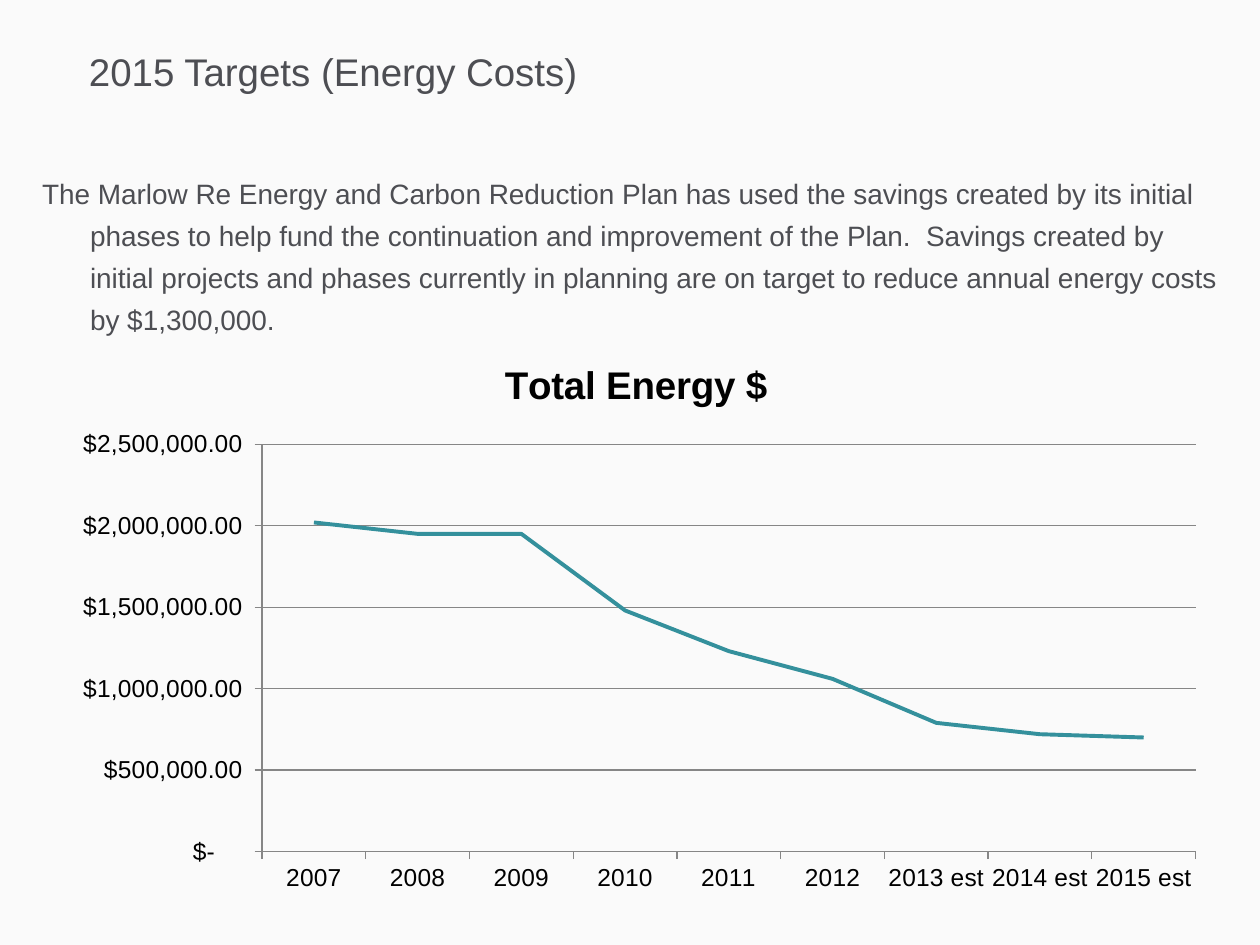
from pptx import Presentation
from pptx.chart.data import CategoryChartData
from pptx.dml.color import RGBColor
from pptx.enum.chart import XL_CHART_TYPE as ChartType, XL_TICK_MARK as TickMark
from pptx.enum.text import MSO_ANCHOR as Anchor
from pptx.util import Pt

PX = 914400 // 126
FONT = "Arial"
BACKGROUND = RGBColor(0xFA, 0xFA, 0xFA)
GREY = RGBColor(0x4D, 0x4E, 0x53)
BLACK = RGBColor(0, 0, 0)
TEAL = RGBColor(0x34, 0x90, 0x9C)
AXIS_GREY = RGBColor(0x86, 0x86, 0x86)

HEADING = "2015 Targets (Energy Costs)"
SUMMARY = (
    "The Marlow Re Energy and Carbon Reduction Plan has used the savings created "
    "by its initial phases to help fund the continuation and improvement of the "
    "Plan.  Savings created by initial projects and phases currently in planning "
    "are on target to reduce annual energy costs by $1,300,000."
)
COST_TITLE = "Total Energy $"
COSTS = {
    "2007": 2020000,
    "2008": 1950000,
    "2009": 1950000,
    "2010": 1480000,
    "2011": 1230000,
    "2012": 1060000,
    "2013 est": 790000,
    "2014 est": 720000,
    "2015 est": 700000,
}
DOLLARS = r'_("$"* #,##0.00_);_("$"* \(#,##0.00\);_("$"* "-"??_);_(@_)'


def px(*lengths):
    return [length * PX for length in lengths]


def style(font, size, color, bold=False):
    font.name, font.size, font.bold = FONT, Pt(size), bold
    font.color.rgb = color


def add_text(slide, text, box, size, color=GREY, inset=0, hanging=0, spacing=1.0):
    frame = slide.shapes.add_textbox(*px(*box)).text_frame
    frame.word_wrap = True
    frame.vertical_anchor = Anchor.TOP
    frame.margin_left = frame.margin_right = frame.margin_bottom = 0
    frame.margin_top = inset * PX
    paragraph = frame.paragraphs[0]
    paragraph.line_spacing = spacing
    if hanging:
        properties = paragraph._p.get_or_add_pPr()
        properties.set("marL", str(hanging * PX))
        properties.set("indent", str(-hanging * PX))
    run = paragraph.add_run()
    run.text = text
    style(run.font, size, color)


def add_cost_chart(slide, box):
    costs = CategoryChartData()
    costs.categories = list(COSTS)
    costs.add_series(COST_TITLE, list(COSTS.values()))
    chart = slide.shapes.add_chart(ChartType.LINE_STACKED, *px(*box), costs).chart
    style(chart.font, 18, BLACK)
    chart.has_legend = False
    chart.has_title = True
    title = chart.chart_title.text_frame
    title.text = COST_TITLE
    style(title.paragraphs[0].runs[0].font, 22, BLACK, bold=True)

    years, dollars = chart.category_axis, chart.value_axis
    for axis in (years, dollars):
        axis.major_tick_mark = TickMark.OUTSIDE
        axis.minor_tick_mark = TickMark.NONE
        style(axis.tick_labels.font, 14, BLACK)
    dollars.minimum_scale, dollars.maximum_scale = 0, 2500000
    dollars.major_unit = 500000
    dollars.has_major_gridlines = True
    dollars.tick_labels.number_format = DOLLARS
    dollars.tick_labels.number_format_is_linked = False
    for part in (years, dollars, dollars.major_gridlines):
        part.format.line.color.rgb = AXIS_GREY
        part.format.line.width = Pt(0.75)

    plot = chart.plots[0]
    plot.vary_by_categories = False
    trend = plot.series[0]
    trend.smooth = False
    trend.format.line.color.rgb = TEAL
    trend.format.line.width = Pt(2.25)


def main():
    deck = Presentation()
    deck.slide_width, deck.slide_height = px(1260, 945)
    slide = deck.slides.add_slide(deck.slide_layouts[6])
    slide.background.fill.solid()
    slide.background.fill.fore_color.rgb = BACKGROUND
    add_text(slide, HEADING, (89, 42, 942, 100), 22, inset=6)
    add_text(slide, SUMMARY, (42, 168, 1181, 168), 16, hanging=48, spacing=1.25)
    add_cost_chart(slide, (53, 336, 1166, 567))
    deck.save("out.pptx")


if __name__ == "__main__":
    main()
